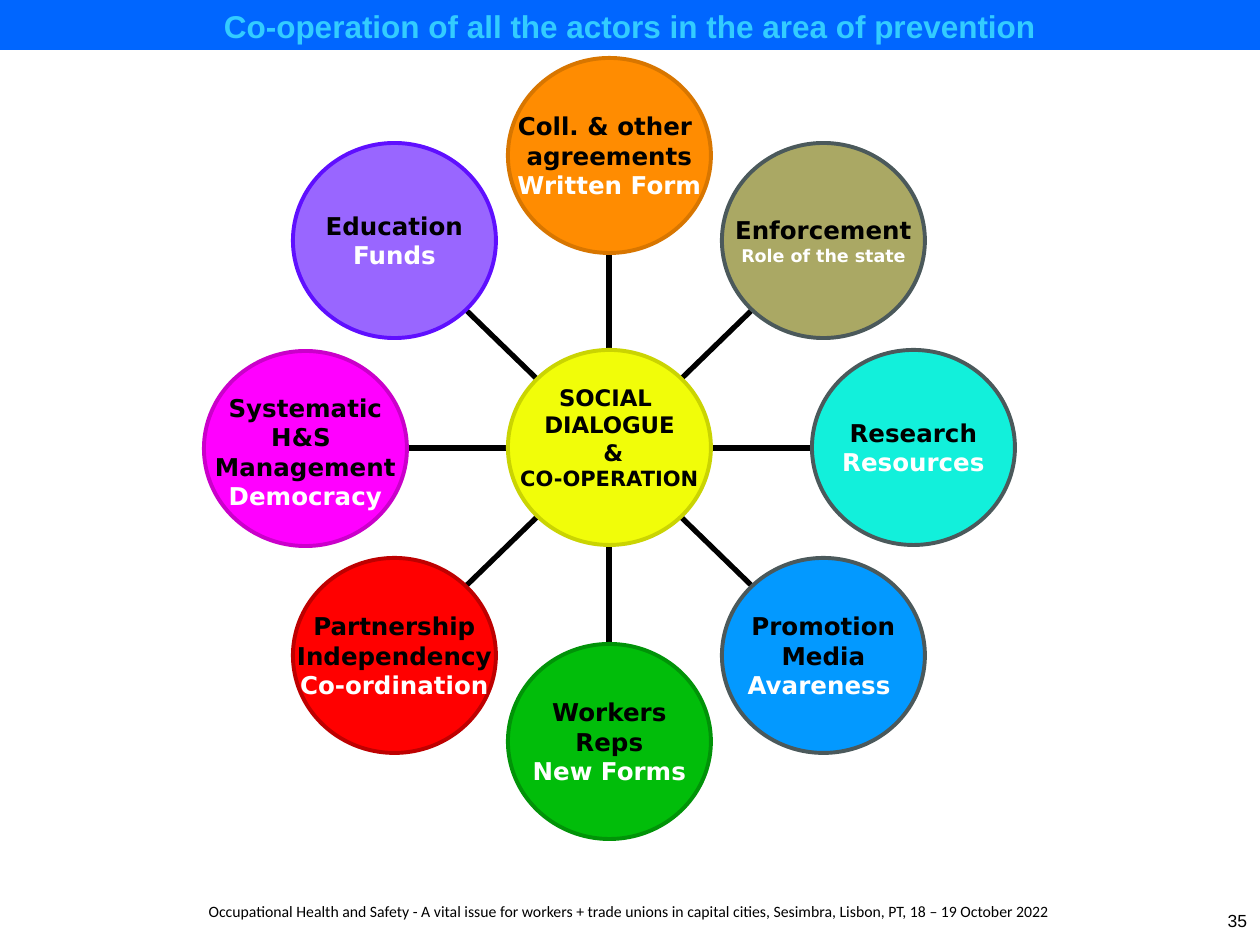
from dataclasses import dataclass
from math import cos, radians, sin

from lxml.etree import SubElement
from pptx import Presentation
from pptx.dml.color import RGBColor
from pptx.enum.shapes import MSO_CONNECTOR as Connector, MSO_SHAPE as Shape
from pptx.enum.text import MSO_ANCHOR as Anchor, PP_ALIGN as Align
from pptx.oxml.ns import qn
from pptx.util import Emu, Pt

PX = 914400 // 126


@dataclass(frozen=True)
class Theme:
    black: str = "000000"
    white: str = "FFFFFF"
    bar: str = "0066FF"
    title: str = "33CCFF"
    slate: str = "4B595B"
    head_font: str = "Arial"
    foot_font: str = "Calibri"
    label_font: str = "DejaVu Sans"
    title_size: int = 18
    label_size: int = 14
    hub_size: int = 13
    hub_small: int = 12
    small_size: int = 10
    foot_size: int = 9
    outline: float = 2.25
    spoke: float = 3


THEME = Theme()

# Geometry of the wheel, in px
HUB_X, HUB_Y = 609, 448
CIRCLE_W, CIRCLE_H = 203, 195
RING_X, RING_Y = 304, 293

# Angle, fill, outline, black lines, white line
ACTORS = [
    (225, "9966FF", "5F0FFF", ["Education"], "Funds"),
    (180, "FF00FF", "CA00CA", ["Systematic", "H&S ", "Management"], "Democracy"),
    (135, "FF0000", "BE0000", ["Partnership", "Independency"], "Co-ordination"),
    (90, "01BD0A", "019308", ["Workers", "Reps"], "New Forms"),
    (45, "0399FF", THEME.slate, ["Promotion", "Media"], "Avareness "),
    (0, "12F0DB", THEME.slate, ["Research"], "Resources"),
    (315, "AAA864", THEME.slate, ["Enforcement"], "Role of the state"),
    (270, "FF8C01", "D87600", ["Coll. & other ", "agreements"], "Written Form"),
]
SMALL_LABELS = {"Role of the state"}


def px(*values):
    return [Emu(round(value) * PX) for value in values]


def rgb(code):
    return RGBColor.from_string(code)


def write(shape, lines, font, bold=False, align=Align.CENTER,
          anchor=Anchor.MIDDLE, wrap=False, insets=(0, 0, 0, 0)):
    """Fill a shape with lines of (text, size, colour)."""
    frame = shape.text_frame
    frame.word_wrap = wrap
    frame.vertical_anchor = anchor
    (frame.margin_left, frame.margin_top,
     frame.margin_right, frame.margin_bottom) = px(*insets)
    for index, (text, size, colour) in enumerate(lines):
        para = frame.add_paragraph() if index else frame.paragraphs[0]
        para.alignment = align
        span = para.add_run()
        span.text = text
        span.font.name = font
        span.font.size = Pt(size)
        span.font.bold = bold
        span.font.color.rgb = rgb(colour)


def add_filled(page, kind, left, top, width, height, fill, outline=None):
    shape = page.shapes.add_shape(kind, *px(left, top, width, height))
    shape.shadow.inherit = False
    shape.fill.solid()
    shape.fill.fore_color.rgb = rgb(fill)
    if outline:
        shape.line.color.rgb = rgb(outline)
        shape.line.width = Pt(THEME.outline)
    else:
        shape.line.fill.background()
    return shape


def add_circle(page, x, y, fill, outline, lines, insets=(0, 0, 0, 0)):
    circle = add_filled(page, Shape.OVAL, x - CIRCLE_W / 2, y - CIRCLE_H / 2,
                        CIRCLE_W, CIRCLE_H, fill, outline)
    write(circle, lines, THEME.label_font, bold=True, insets=insets)


def add_spoke(page, angle):
    """Line from the edge of the hub to the edge of an outer circle."""
    across, down = cos(radians(angle)), sin(radians(angle))
    line = page.shapes.add_connector(Connector.STRAIGHT, *px(
        HUB_X + across * CIRCLE_W / 2, HUB_Y + down * CIRCLE_H / 2,
        HUB_X + across * (RING_X - CIRCLE_W / 2),
        HUB_Y + down * (RING_Y - CIRCLE_H / 2)))
    line.line.color.rgb = rgb(THEME.black)
    line.line.width = Pt(THEME.spoke)
    SubElement(line._element.spPr, qn("a:effectLst"))


def add_actor(page, angle, fill, outline, subjects, remark):
    add_spoke(page, angle)
    remark_size = THEME.small_size if remark in SMALL_LABELS else THEME.label_size
    lines = [(text, THEME.label_size, THEME.black) for text in subjects]
    lines.append((remark, remark_size, THEME.white))
    top_inset = 6 if len(lines) > 3 else 0
    add_circle(page, HUB_X + RING_X * cos(radians(angle)),
               HUB_Y + RING_Y * sin(radians(angle)),
               fill, outline, lines, (0, top_inset, 0, 0))


def add_hub(page):
    lines = [(text, THEME.hub_size, THEME.black)
             for text in ("SOCIAL ", "DIALOGUE", " &")]
    lines.append(("CO-OPERATION", THEME.hub_small, THEME.black))
    add_circle(page, HUB_X, HUB_Y, "F1FD09", "CAD402", lines, (0, 0, 0, 20))


def add_title(page, text):
    bar = add_filled(page, Shape.RECTANGLE, 0, 0, 1260, 50, THEME.bar)
    write(bar, [(text, THEME.title_size, THEME.title)], THEME.head_font,
          bold=True, wrap=True, insets=(13, 7, 13, 5))


def add_footer(page, text, number):
    box = page.shapes.add_textbox(*px(0, 873, 1260, 71))
    write(box, [(text, THEME.foot_size, THEME.black)], THEME.foot_font,
          anchor=Anchor.TOP, wrap=True, insets=(13, 45, 13, 6))
    box = page.shapes.add_textbox(*px(1176, 896, 84, 50))
    write(box, [(number, THEME.small_size, THEME.black)], THEME.head_font,
          align=Align.RIGHT, wrap=True, insets=(13, 6, 13, 6))


def main():
    deck = Presentation()
    deck.slide_width, deck.slide_height = px(1260, 945)
    page = deck.slides.add_slide(deck.slide_layouts[6])

    # Footer and page number
    add_footer(page, "Occupational Health and Safety - A vital issue for workers "
               "+ trade unions in capital cities, Sesimbra, Lisbon, PT, "
               "18 – 19 October 2022 ", "35")

    # Wheel of actors around the hub
    for actor in ACTORS:
        add_actor(page, *actor)
    add_hub(page)

    # Title bar
    add_title(page, "Co-operation of all the actors in the area of prevention")
    deck.save("out.pptx")


if __name__ == "__main__":
    main()
